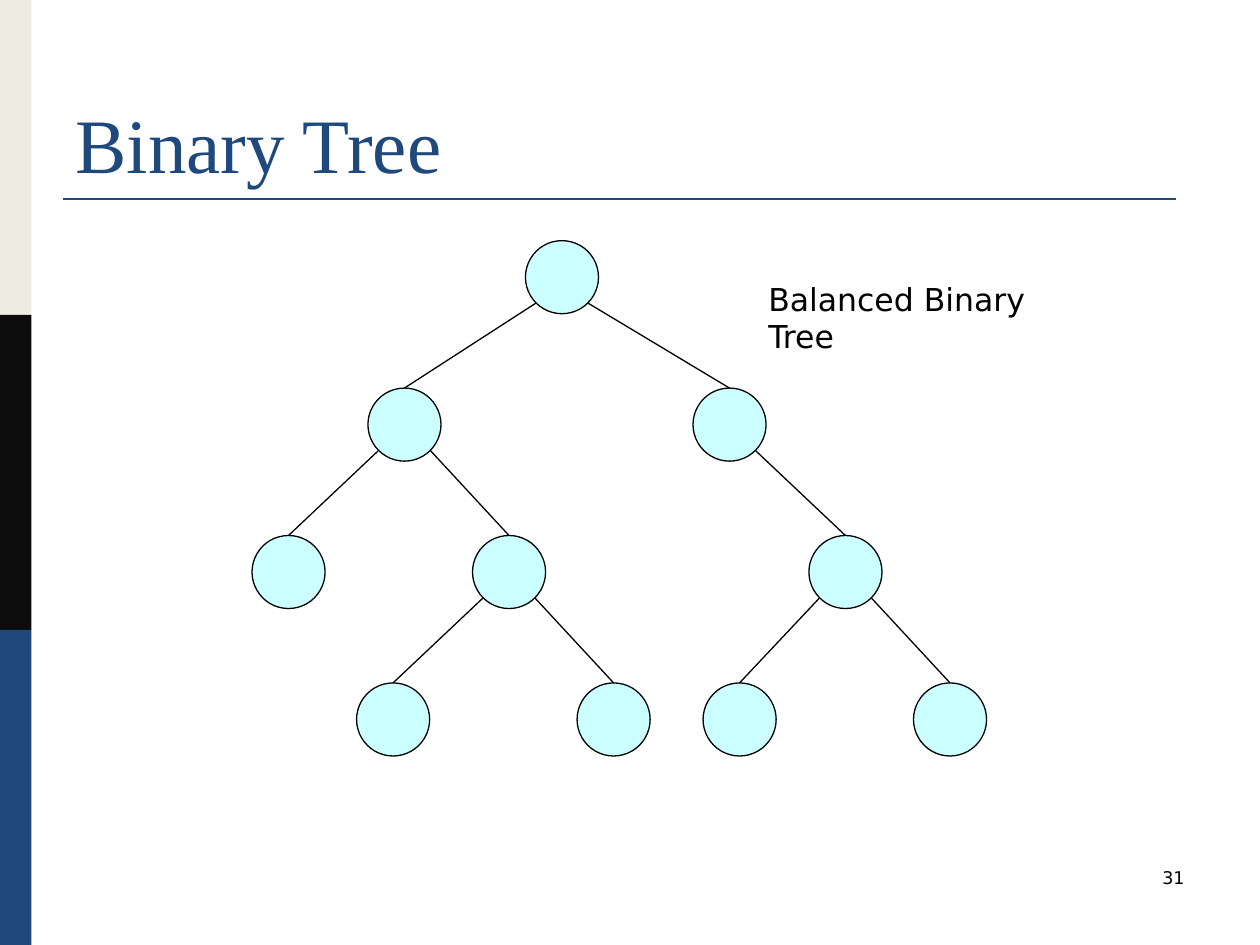
from math import sqrt

from lxml.etree import SubElement
from pptx import Presentation
from pptx.dml.color import RGBColor
from pptx.enum.shapes import MSO_CONNECTOR, MSO_SHAPE
from pptx.enum.text import MSO_ANCHOR, MSO_AUTO_SIZE, PP_ALIGN
from pptx.oxml.ns import qn
from pptx.util import Inches, Pt

# Content
TITLE = "Binary Tree"
CAPTION = "Balanced Binary Tree"
SLIDE_NUMBER = "31"

# Each node: name -> (level, left edge)
NODES = {
    "root": (0, 4.17),
    "left": (1, 2.92),
    "right": (1, 5.5),
    "left-left": (2, 2.0),
    "left-right": (2, 3.75),
    "right-right": (2, 6.42),
    "left-right-left": (3, 2.83),
    "left-right-right": (3, 4.58),
    "right-right-left": (3, 5.58),
    "right-right-right": (3, 7.25),
}

THEME = {
    "title_font": "Times New Roman", "body_font": "DejaVu Sans",
    "title_size": 44, "caption_size": 18, "number_size": 10,
    "blue": "1F497D", "cream": "EEECE1", "dark": "0C0C0C",
    "node": "CCFFFF", "black": "000000",
    "rule_width": 1.5, "edge_width": 0.75,
}

# Layout in inches
BAND_WIDTH, BAND_HEIGHT = 0.25, 2.5
TREE_TOP, LEVEL_STEP, DIAMETER = 1.91, 1.17, 0.58


def color(name):
    return RGBColor.from_string(THEME[name])


def write(shape, text, *, font, size, ink="black", align=PP_ALIGN.LEFT,
          anchor=MSO_ANCHOR.TOP):
    frame = shape.text_frame
    frame.word_wrap = True
    frame.auto_size = MSO_AUTO_SIZE.NONE
    frame.vertical_anchor = anchor
    paragraph = frame.paragraphs[0]
    paragraph.alignment = align
    run = paragraph.add_run()
    run.text = text
    run.font.name = THEME[font]
    run.font.size = Pt(THEME[size])
    run.font.color.rgb = color(ink)


def add_filled(slide, kind, box, fill, outline=None):
    shape = slide.shapes.add_shape(kind, *map(Inches, box))
    shape.shadow.inherit = False
    shape.fill.solid()
    shape.fill.fore_color.rgb = color(fill)
    if outline:
        shape.line.color.rgb = color(outline)
        shape.line.width = Pt(THEME["edge_width"])
    else:
        shape.line.fill.background()
    return shape


def add_line(slide, start, end, ink, width):
    line = slide.shapes.add_connector(
        MSO_CONNECTOR.STRAIGHT, *map(Inches, (*start, *end)))
    line.line.color.rgb = color(ink)
    line.line.width = Pt(THEME[width])
    SubElement(line._element.spPr, qn("a:effectLst"))
    return line


def add_tree(slide):
    radius = DIAMETER / 2
    centers, circles = {}, {}
    for name, (level, left) in NODES.items():
        top = TREE_TOP + level * LEVEL_STEP
        centers[name] = (left + radius, top + radius)
        circles[name] = add_filled(
            slide, MSO_SHAPE.OVAL, (left, top, DIAMETER, DIAMETER), "node", "black")

    # Edges leave the parent at its lower diagonal and reach the child's top
    diagonal = radius / sqrt(2)
    for name in NODES:
        if name == "root":
            continue
        parent, _, side = name.rpartition("-")
        parent_x, parent_y = centers[parent or "root"]
        child_x, child_y = centers[name]
        offset = -diagonal if side == "left" else diagonal
        edge = add_line(slide, (parent_x + offset, parent_y + diagonal),
                        (child_x, child_y - radius), "black", "edge_width")
        edge.end_connect(circles[name], 0)


def main():
    presentation = Presentation()
    presentation.slide_width, presentation.slide_height = Inches(10), Inches(7.5)
    slide = presentation.slides.add_slide(presentation.slide_layouts[5])

    # Side bands and title rule
    for row, fill in enumerate(("cream", "dark", "blue")):
        add_filled(slide, MSO_SHAPE.RECTANGLE,
                   (0, row * BAND_HEIGHT, BAND_WIDTH, BAND_HEIGHT), fill)
    add_line(slide, (0.5, 1.58), (9.33, 1.58), "blue", "rule_width")

    # Title
    title = slide.shapes.title
    title.left, title.top, title.width, title.height = map(Inches, (0.5, 0.3, 9, 1.25))
    write(title, TITLE, font="title_font", size="title_size", ink="blue",
          anchor=MSO_ANCHOR.BOTTOM)

    # Tree, caption and slide number
    add_tree(slide)
    caption = slide.shapes.add_textbox(*map(Inches, (6, 2.17, 2.83, 0.4)))
    write(caption, CAPTION, font="body_font", size="caption_size")
    number = slide.shapes.add_textbox(*map(Inches, (7.17, 6.83, 2.33, 0.5)))
    write(number, SLIDE_NUMBER, font="body_font", size="number_size",
          align=PP_ALIGN.RIGHT)

    presentation.save("out.pptx")


if __name__ == "__main__":
    main()
